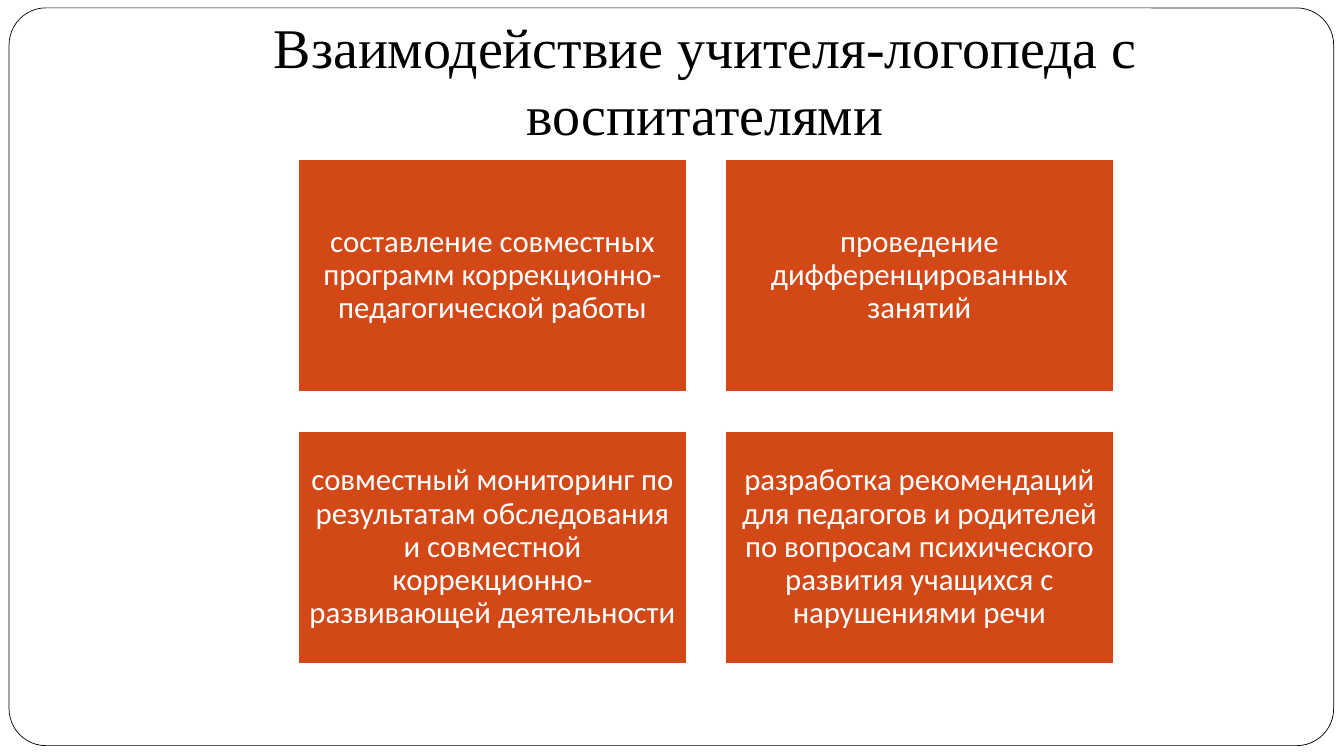
from pptx import Presentation
from pptx.dml.color import RGBColor
from pptx.enum.shapes import MSO_SHAPE
from pptx.enum.text import MSO_ANCHOR, PP_ALIGN
from pptx.util import Cm, Pt

WHITE = RGBColor(0xFF, 0xFF, 0xFF)
BLACK = RGBColor(0, 0, 0)
RUST = RGBColor(0xD3, 0x48, 0x17)

TITLE = "Взаимодействие учителя-логопеда с воспитателями"
TASKS = [
    "составление совместных программ коррекционно-педагогической работы",
    "проведение дифференцированных занятий",
    "совместный мониторинг по результатам обследования и совместной "
    "коррекционно-развивающей деятельности",
    "разработка рекомендаций для педагогов и родителей по вопросам "
    "психического развития учащихся с нарушениями речи",
]
COLS = 2
LEFT, TOP = 7.52, 4.01
WIDTH, HEIGHT = 9.78, 5.87
GAP = 0.98


def write(shape, text, *, font, size, color, anchor, pads, line=1.0, after=0):
    """Fill a shape with one centred paragraph; pads are left, top, right, bottom in cm."""
    frame = shape.text_frame
    frame.word_wrap = True
    frame.vertical_anchor = anchor
    (frame.margin_left, frame.margin_top,
     frame.margin_right, frame.margin_bottom) = map(Cm, pads)
    para = frame.paragraphs[0]
    para.alignment = PP_ALIGN.CENTER
    para.line_spacing = line
    para.space_before = Pt(0)
    para.space_after = Pt(after)
    run = para.add_run()
    run.text = text
    run.font.name = font
    run.font.size = Pt(size)
    run.font.color.rgb = color


def add_box(slide, kind, left, top, width, height, *, fill, line, weight):
    box = slide.shapes.add_shape(kind, Cm(left), Cm(top), Cm(width), Cm(height))
    box.shadow.inherit = False
    box.fill.solid()
    box.fill.fore_color.rgb = fill
    box.line.color.rgb = line
    box.line.width = Pt(weight)
    return box


def set_title(slide):
    title = slide.shapes.title
    title.left, title.top = Cm(3.38), Cm(0.76)
    title.width, title.height = Cm(28.78), Cm(3.18)
    write(title, TITLE, font="Times New Roman", size=40, color=BLACK,
          anchor=MSO_ANCHOR.BOTTOM, pads=(0.25, 0.13, 0.25, 0.25))


def add_frame(slide):
    """Put the rounded page border behind the title."""
    border = add_box(slide, MSO_SHAPE.ROUNDED_RECTANGLE, 0.23, 0.2, 33.38, 18.59,
                     fill=WHITE, line=BLACK, weight=0.5)
    border.adjustments[0] = 0.05
    slide.shapes.title.element.addprevious(border.element)


def add_tasks(slide):
    for index, task in enumerate(TASKS):
        row, col = divmod(index, COLS)
        box = add_box(slide, MSO_SHAPE.RECTANGLE,
                      LEFT + col * (WIDTH + GAP), TOP + row * (HEIGHT + GAP),
                      WIDTH, HEIGHT, fill=RUST, line=WHITE, weight=1)
        write(box, task, font="Calibri", size=22, color=WHITE,
              anchor=MSO_ANCHOR.MIDDLE, pads=[0.23] * 4, line=0.9, after=7.7)


def main():
    deck = Presentation()
    deck.slide_width, deck.slide_height = Cm(33.87), Cm(19.05)
    slide = deck.slides.add_slide(deck.slide_layouts[5])
    set_title(slide)
    add_frame(slide)
    add_tasks(slide)
    deck.save("out.pptx")


if __name__ == "__main__":
    main()
